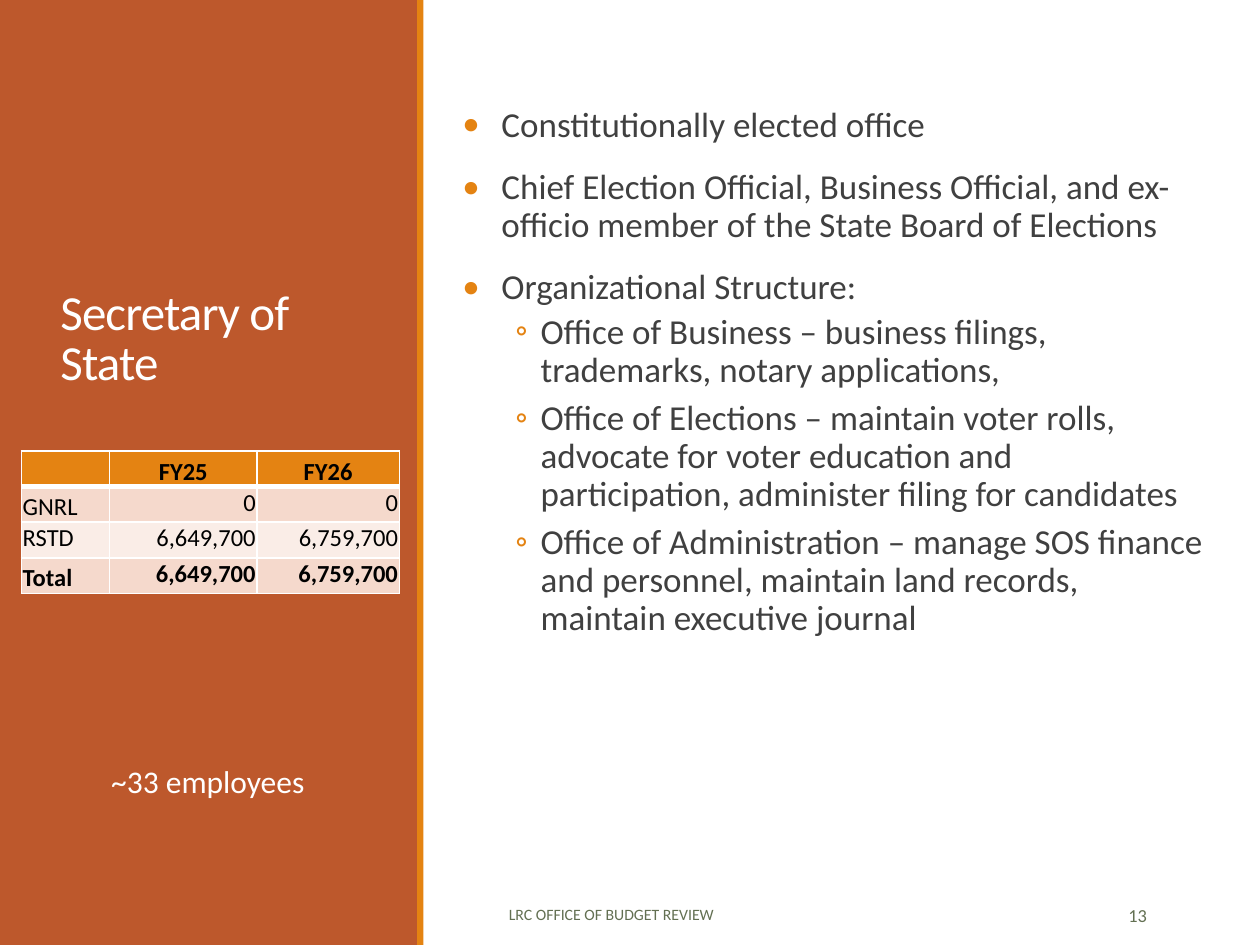
"""Build the Secretary of State budget slide with its appropriations table."""
from dataclasses import dataclass

import lxml.etree
import pptx
import pptx.dml.color
import pptx.enum.shapes
import pptx.enum.text
import pptx.oxml.ns
import pptx.util

Inches = pptx.util.Inches
Pt = pptx.util.Pt
Align = pptx.enum.text.PP_ALIGN
Anchor = pptx.enum.text.MSO_ANCHOR
qn = pptx.oxml.ns.qn

COLORS = {
    "panel": "BD582C", "accent": "E48312", "white": "FFFFFF", "body": "404040",
    "footer": "637052", "black": "000000", "band": "F5D9CC", "light_band": "FAEDE7",
}
FONT = "Calibri"


@dataclass(frozen=True)
class Box:
    left: float
    top: float
    width: float
    height: float

    def lengths(self) -> tuple:
        return tuple(Inches(v) for v in (self.left, self.top, self.width, self.height))


@dataclass(frozen=True)
class BulletLevel:
    symbol: str
    level: int
    margin: float
    hanging: float
    before: float
    after: float


@dataclass(frozen=True)
class Bar:
    box: Box
    color: str


@dataclass(frozen=True)
class Label:
    text: str
    box: Box
    size: float
    color: str
    align: Align = Align.LEFT
    anchor: Anchor = Anchor.MIDDLE


DUTY = BulletLevel("•", 0, 0.31, 0.31, 12, 2)
OFFICE = BulletLevel("◦", 1, 0.62, 0.2, 2, 4)

BARS = [
    Bar(Box(0, 0, 3.32, 7.5), "panel"),
    Bar(Box(3.31, 0, 0.05, 7.5), "accent"),
]
LABELS = [
    Label("LRC OFFICE OF BUDGET REVIEW", Box(3.94, 7.06, 3.81, 0.4), 9, "footer"),
    Label("13", Box(8.12, 7.06, 1.08, 0.4), 10.5, "footer", Align.RIGHT),
    Label("~33 employees", Box(0.38, 6, 2.54, 0.4), 18, "white", Align.CENTER, Anchor.TOP),
]
RESPONSIBILITIES = [
    (DUTY, "Constitutionally elected office"),
    (DUTY, "Chief Election Official, Business Official, and ex-officio member "
           "of the State Board of Elections"),
    (DUTY, "Organizational Structure:"),
    (OFFICE, "Office of Business – business filings, trademarks, notary applications,"),
    (OFFICE, "Office of Elections – maintain voter rolls, advocate for voter education "
             "and participation, administer filing for candidates"),
    (OFFICE, "Office of Administration – manage SOS finance and personnel, "
             "maintain land records, maintain executive journal"),
]
BUDGET = [
    ("", "FY25", "FY26"),
    ("GNRL", "0", "0"),
    ("RSTD", "6,649,700", "6,759,700"),
    ("Total", "6,649,700", "6,759,700"),
]
BUDGET_BOX = Box(0.17, 3.58, 3, 1.13)
BUDGET_WIDTHS = (0.7, 1.17, 1.13)
ROW_FILLS = ("accent", "band", "light_band", "band")


def rgb(name: str) -> pptx.dml.color.RGBColor:
    return pptx.dml.color.RGBColor.from_string(COLORS[name])


def write(paragraph, text: str, *, size: float, color: str, bold: bool = False,
          align: Align = Align.LEFT, line_spacing: float = 1, tracking: float = 0) -> None:
    paragraph.alignment = align
    paragraph.line_spacing = line_spacing
    if not text:
        lxml.etree.SubElement(paragraph._p, qn("a:endParaRPr"), sz=str(int(size * 100)))
        return
    run = paragraph.add_run()
    run.text = text
    run.font.name = FONT
    run.font.size = Pt(size)
    run.font.bold = bold
    run.font.color.rgb = rgb(color)
    if tracking:
        run.font._element.set("spc", str(int(tracking * 100)))


def add_bar(slide, bar: Bar) -> None:
    shape = slide.shapes.add_shape(pptx.enum.shapes.MSO_SHAPE.RECTANGLE, *bar.box.lengths())
    shape.shadow.inherit = False
    shape.fill.solid()
    shape.fill.fore_color.rgb = rgb(bar.color)
    shape.line.fill.background()


def add_title(slide, text: str) -> None:
    title = slide.shapes.title
    title.left, title.top, title.width, title.height = Box(0.38, 0.65, 2.62, 2.5).lengths()
    frame = title.text_frame
    frame.word_wrap = True
    frame.auto_size = pptx.enum.text.MSO_AUTO_SIZE.NONE
    frame.vertical_anchor = Anchor.BOTTOM
    write(frame.paragraphs[0], text, size=28, color="white", line_spacing=0.85, tracking=-0.5)
    slide.shapes._spTree.append(title._element)


def add_frame(slide, box: Box, anchor: Anchor):
    frame = slide.shapes.add_textbox(*box.lengths()).text_frame
    frame.word_wrap = True
    frame.vertical_anchor = anchor
    return frame


def add_label(slide, label: Label) -> None:
    frame = add_frame(slide, label.box, label.anchor)
    write(frame.paragraphs[0], label.text, size=label.size, color=label.color, align=label.align)


def set_bullet(paragraph, style: BulletLevel) -> None:
    paragraph.level = style.level
    paragraph.space_before = Pt(style.before)
    paragraph.space_after = Pt(style.after)
    properties = paragraph._p.get_or_add_pPr()
    properties.set("marL", str(Inches(style.margin)))
    properties.set("indent", str(-Inches(style.hanging)))
    bullet_color = lxml.etree.SubElement(properties, qn("a:buClr"))
    lxml.etree.SubElement(bullet_color, qn("a:srgbClr"), val=COLORS["accent"])
    lxml.etree.SubElement(properties, qn("a:buFont"), typeface=FONT)
    lxml.etree.SubElement(properties, qn("a:buChar"), char=style.symbol)


def add_responsibilities(slide) -> None:
    frame = add_frame(slide, Box(3.67, 0.8, 5.92, 5.75), Anchor.TOP)
    frame.margin_left = frame.margin_right = 0
    for index, (style, text) in enumerate(RESPONSIBILITIES):
        paragraph = frame.add_paragraph() if index else frame.paragraphs[0]
        write(paragraph, text, size=20, color="body", line_spacing=0.9)
        set_bullet(paragraph, style)


def set_borders(cell, top: float, bottom: float) -> None:
    properties = cell._tc.get_or_add_tcPr()
    for side, width in (("L", 1), ("R", 1), ("T", top), ("B", bottom)):
        border = lxml.etree.SubElement(properties, qn(f"a:ln{side}"), w=str(Pt(width)))
        fill = lxml.etree.SubElement(border, qn("a:solidFill"))
        lxml.etree.SubElement(fill, qn("a:srgbClr"), val=COLORS["white"])


def add_budget(slide) -> None:
    table = slide.shapes.add_table(len(BUDGET), len(BUDGET_WIDTHS), *BUDGET_BOX.lengths()).table
    for column, width in zip(table.columns, BUDGET_WIDTHS):
        column.width = Inches(width)
    for row, values in enumerate(BUDGET):
        header, total = row == 0, row == len(BUDGET) - 1
        for column, text in enumerate(values):
            cell = table.cell(row, column)
            set_borders(cell, top=3 if row == 1 else 1, bottom=3 if header else 1)
            cell.fill.solid()
            cell.fill.fore_color.rgb = rgb(ROW_FILLS[row])
            cell.margin_left = cell.margin_right = cell.margin_top = Inches(0.01)
            cell.margin_bottom = 0
            low = header or (column == 0 and text != "RSTD")
            cell.vertical_anchor = Anchor.BOTTOM if low else Anchor.TOP
            align = Align.CENTER if header else Align.RIGHT if column else Align.LEFT
            write(cell.text_frame.paragraphs[0], text, size=14, color="black",
                  bold=header or total, align=align)


def main() -> None:
    deck = pptx.Presentation()
    deck.slide_width, deck.slide_height = Inches(10), Inches(7.5)
    slide = deck.slides.add_slide(deck.slide_layouts[5])
    for bar in BARS:
        add_bar(slide, bar)
    add_title(slide, "Secretary of State")
    add_responsibilities(slide)
    add_budget(slide)
    for label in LABELS:
        add_label(slide, label)
    deck.save("out.pptx")


if __name__ == "__main__":
    main()
